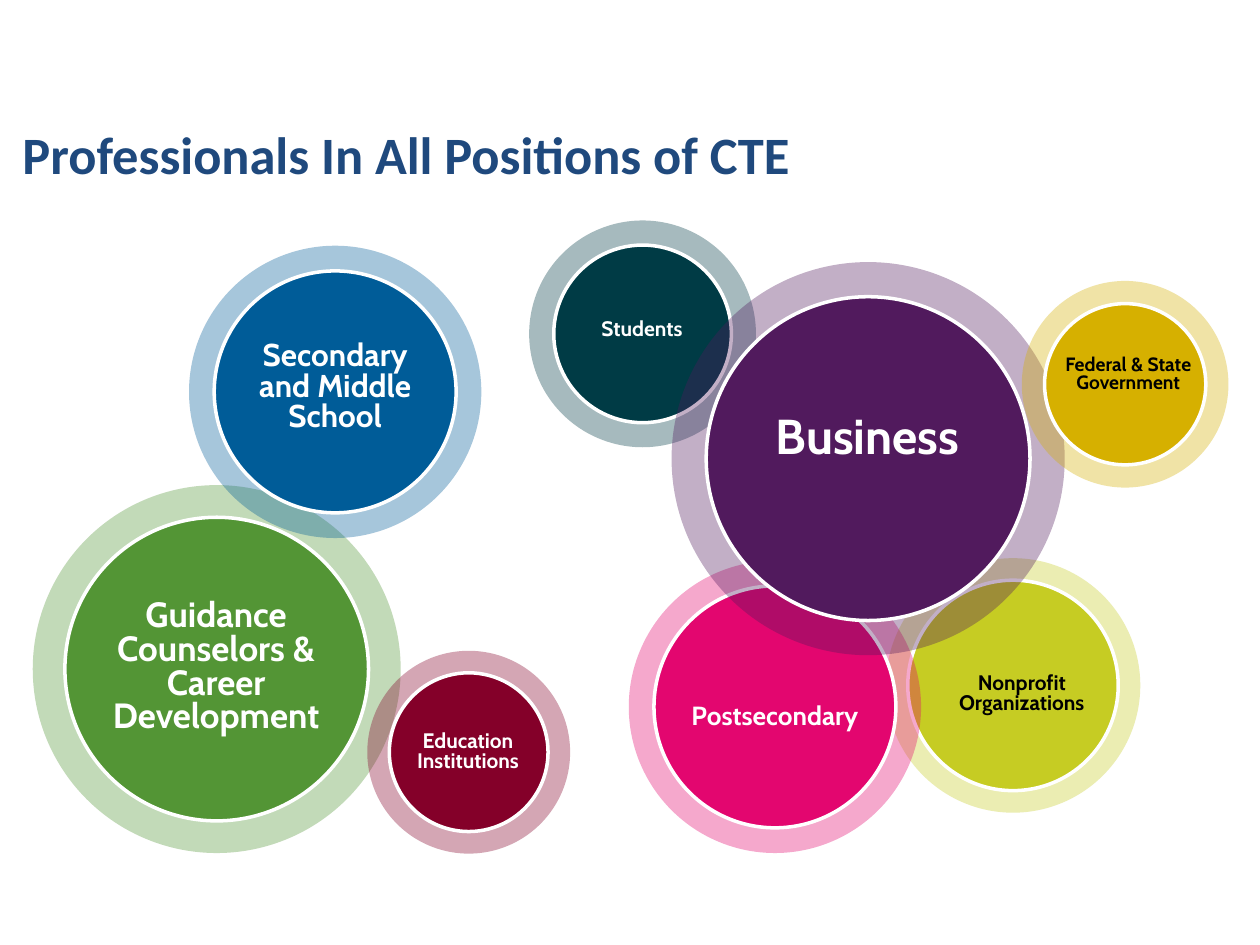
"""Build a slide of ringed circles naming the professionals who work in CTE."""
from lxml import etree
from pptx import Presentation, util as u
from pptx.dml.color import RGBColor
from pptx.enum import shapes, text
from pptx.oxml import ns

presentation = Presentation()
presentation.slide_width, presentation.slide_height = u.Inches(10), u.Inches(7.5)
slide = presentation.slides.add_slide(presentation.slide_layouts[6])
COLUMN = presentation.slide_width / 100
ROW = presentation.slide_height / 75


def paint(color_format, color):
    color_format.rgb = RGBColor.from_string(color)


def add_text(words, left, top, width, height, size, color, font="Cabin",
             align=text.PP_ALIGN.CENTER, spacing=0.8):
    box = slide.shapes.add_textbox(round(left * COLUMN), round(top * ROW),
                                   round(width * COLUMN), round(height * ROW))
    frame = box.text_frame
    frame.word_wrap = True
    frame.auto_size = text.MSO_AUTO_SIZE.SHAPE_TO_FIT_TEXT
    paragraph = frame.paragraphs[0]
    paragraph.alignment, paragraph.line_spacing = align, spacing
    run = paragraph.add_run()
    run.text = words
    run.font.name, run.font.size, run.font.bold = font, u.Pt(size), True
    paint(run.font.color, color)


# words, centre, ring and disc diameters, fill, text box, text size, text colour
groups = [
    ("Nonprofit Organizations", (80.4, 54.4), (20.2, 16.7), "C6CC23",
     (74, 53, 14.2, 4.2), 12, "000000"),
    ("Postsecondary", (61.5, 56.1), (23.2, 19.2), "E3066F",
     (52.6, 55.5, 17.8, 3), 15, "FFFFFF"),
    ("Students", (51, 26.5), (18, 14.1), "003B45",
     (44.4, 24.9, 13.1, 2.6), 12, "FFFFFF"),
    ("Business", (68.9, 36.4), (31.2, 25.7), "511A5D",
     (57.6, 32.6, 22.5, 4.8), 28, "FFFFFF"),
    ("Federal & State Government", (89.3, 30.5), (16.4, 12.8), "D6B000",
     (83, 27.8, 13.1, 5.5), 11, "000000"),
    ("Guidance Counselors & Career Development", (17.2, 53.1), (29.2, 24.1), "539535",
     (5.9, 47.2, 22.5, 11.8), 20, "FFFFFF"),
    ("Education Institutions", (37.2, 59.7), (16.1, 12.6), "840029",
     (30.6, 57.6, 13.1, 4.2), 12, "FFFFFF"),
    ("Secondary and Middle School", (26.6, 31.1), (23.2, 19.2), "005C98",
     (17.7, 26.7, 17.8, 8.3), 18, "FFFFFF"),
]

for words, (center_x, center_y), diameters, fill, box, size, color in groups:
    for part, diameter in zip(("ring", "disc"), diameters):
        shape = slide.shapes.add_shape(
            shapes.MSO_SHAPE.OVAL,
            round((center_x - diameter / 2) * COLUMN),
            round((center_y - diameter / 2) * ROW),
            round(diameter * COLUMN), round(diameter * ROW))
        shape.shadow.inherit = False
        shape.fill.solid()
        paint(shape.fill.fore_color, fill)
        if part == "ring":
            shape.line.fill.background()
            solid = shape.fill._xPr.find(ns.qn("a:solidFill"))
            etree.SubElement(solid[0], ns.qn("a:alpha"), val="35000")
        else:
            paint(shape.line.color, "FFFFFF")
            shape.line.width = u.Pt(2)
    add_text(words, *box, size=size, color=color)

add_text("Professionals In All Positions of CTE", 0.8, 9.2, 65, 6.1, size=30,
         color="1F497D", font="Calibri", align=text.PP_ALIGN.LEFT, spacing=1.0)

presentation.save("out.pptx")
